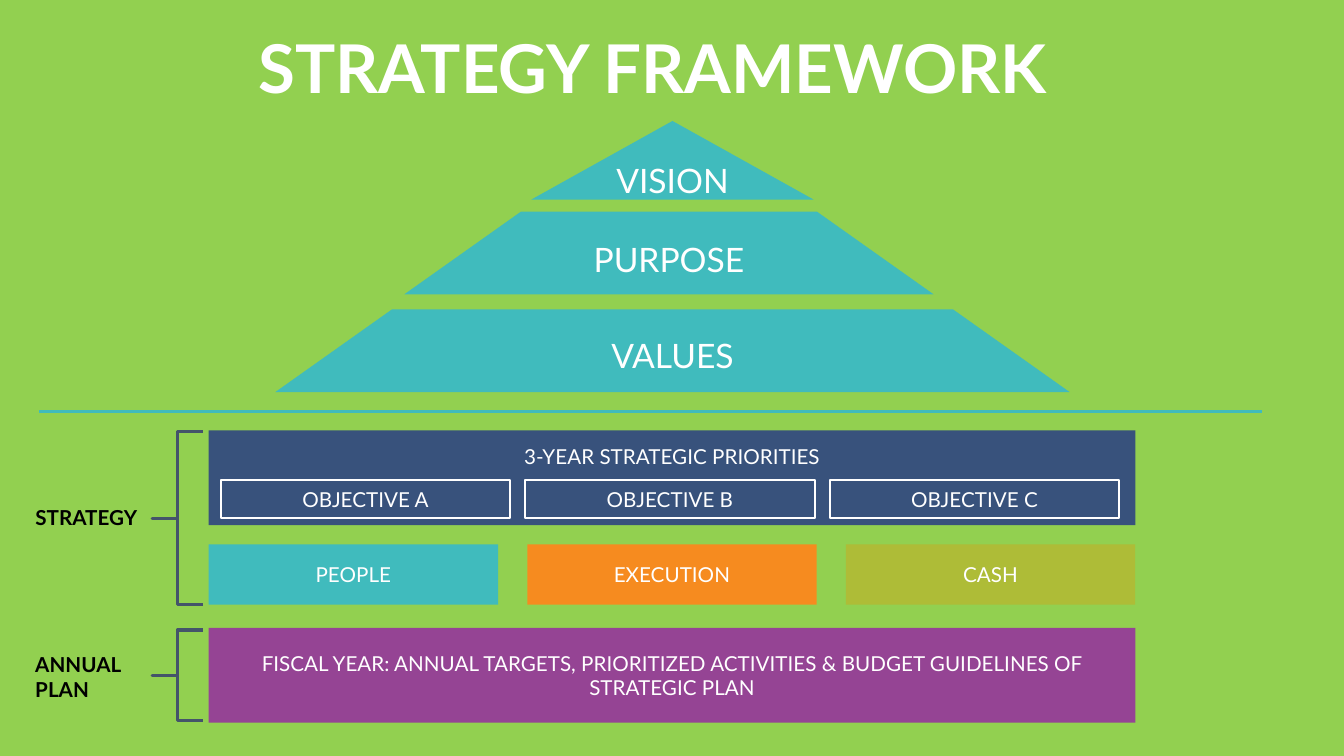
from dataclasses import dataclass

from pptx import Presentation
from pptx.dml.color import RGBColor
from pptx.enum.shapes import MSO_CONNECTOR, MSO_SHAPE
from pptx.enum.text import MSO_ANCHOR, PP_ALIGN
from pptx.oxml.ns import qn
from pptx.util import Inches, Pt
from lxml.etree import SubElement


@dataclass(frozen=True)
class Theme:
    font: str = "Lato"
    background: str = "92D050"
    teal: str = "40BBBD"
    navy: str = "38527C"
    orange: str = "F68B1F"
    olive: str = "AEBC37"
    purple: str = "954494"
    slate: str = "44546A"
    white: str = "FFFFFF"
    black: str = "000000"
    title_size: float = 48
    tier_size: float = 24
    body_size: float = 14.7
    rule_width: float = 2.25
    outline_width: float = 1.5


theme = Theme()
frame_format = {
    "word_wrap": True,
    "margin_left": Inches(0.13),
    "margin_top": Inches(0.13),
    "margin_right": Inches(0.13),
    "margin_bottom": Inches(0.13),
}


def write(shape, text, size=theme.body_size, color=theme.white, bold=False,
          align=PP_ALIGN.CENTER, anchor=MSO_ANCHOR.MIDDLE):
    frame = shape.text_frame
    for name, value in {**frame_format, "vertical_anchor": anchor}.items():
        setattr(frame, name, value)
    frame.text = text
    for paragraph in frame.paragraphs:
        paragraph.alignment = align
        for run in paragraph.runs:
            run.font.color.rgb = RGBColor.from_string(color)
            for name, value in {"name": theme.font, "size": Pt(size), "bold": bold}.items():
                setattr(run.font, name, value)


def draw(shapes, kind, box, fill=None, outline=None, width=theme.outline_width):
    shape = shapes.add_shape(kind, *map(Inches, box))
    shape.shadow.inherit = False
    if fill:
        shape.fill.solid()
        shape.fill.fore_color.rgb = RGBColor.from_string(fill)
    else:
        shape.fill.background()
    if outline:
        shape.line.color.rgb = RGBColor.from_string(outline)
        shape.line.width = Pt(width)
    else:
        shape.line.fill.background()
    return shape


presentation = Presentation()
presentation.slide_width = Inches(13.33)
presentation.slide_height = Inches(7.5)
slide = presentation.slides.add_slide(presentation.slide_layouts[6])
slide.background.fill.solid()
slide.background.fill.fore_color.rgb = RGBColor.from_string(theme.background)

title = slide.shapes.add_textbox(*map(Inches, (1.91, 0.13, 9.13, 0.62)))
write(title, "STRATEGY FRAMEWORK", theme.title_size, bold=True, anchor=MSO_ANCHOR.TOP)

divider = slide.shapes.add_connector(
    MSO_CONNECTOR.STRAIGHT, Inches(0.39), Inches(4.08), Inches(12.52), Inches(4.08))
divider.line.color.rgb = RGBColor.from_string(theme.teal)
divider.line.width = Pt(theme.rule_width)
SubElement(divider.line._get_or_add_ln().getparent(), qn("a:effectLst"))

band_left, band_width, band_height = 2.07, 9.19, 0.94
column_width = 2.87

priorities = slide.shapes.add_group_shape().shapes
priority_band = draw(priorities, MSO_SHAPE.RECTANGLE,
                     (band_left, 4.27, band_width, band_height), theme.navy)
write(priority_band, "3-YEAR STRATEGIC PRIORITIES", anchor=MSO_ANCHOR.TOP)
for column, letter in enumerate("ABC"):
    objective = draw(priorities, MSO_SHAPE.RECTANGLE,
                     (2.19 + column * 3.02, 4.76, column_width, 0.38), outline=theme.white)
    write(objective, f"OBJECTIVE {letter}")

pillars = slide.shapes.add_group_shape().shapes
pillar_step = (band_width - column_width) / 2
for column, (name, color) in enumerate([
    ("PEOPLE", theme.teal),
    ("EXECUTION", theme.orange),
    ("CASH", theme.olive),
]):
    pillar = draw(pillars, MSO_SHAPE.RECTANGLE,
                  (band_left + column * pillar_step, 5.4, column_width, 0.6), color)
    write(pillar, name)

annual_band = draw(slide.shapes, MSO_SHAPE.RECTANGLE,
                   (band_left, 6.23, band_width, band_height), theme.purple)
write(annual_band, "FISCAL YEAR: ANNUAL TARGETS, PRIORITIZED ACTIVITIES & BUDGET "
                   "GUIDELINES OF STRATEGIC PLAN")

for name, brace_top, brace_height, label_top, label_width in [
    ("STRATEGY", 4.28, 1.72, 4.89, 1.38),
    ("ANNUAL\nPLAN", 6.25, 0.9, 6.34, 2.1),
]:
    section = slide.shapes.add_group_shape().shapes
    brace = draw(section, MSO_SHAPE.LEFT_BRACE, (1.51, brace_top, 0.5, brace_height),
                 outline=theme.slate, width=theme.rule_width)
    brace.adjustments[0] = 0
    brace.adjustments[1] = 0.5
    label = section.add_textbox(*map(Inches, (0.22, label_top, label_width, 0.4)))
    write(label, name, color=theme.black, bold=True,
          align=PP_ALIGN.LEFT, anchor=MSO_ANCHOR.TOP)

pyramid = slide.shapes.add_group_shape().shapes
for name, kind, slant, box in [
    ("VISION", MSO_SHAPE.ISOSCELES_TRIANGLE, 0.5, (5.27, 1.2, 2.8, 0.78)),
    ("PURPOSE", MSO_SHAPE.TRAPEZOID, 1.41, (4.01, 2.1, 5.25, 0.82)),
    ("VALUES", MSO_SHAPE.TRAPEZOID, 1.41, (2.73, 3.07, 7.88, 0.82)),
]:
    tier = draw(pyramid, kind, box, theme.teal)
    tier.adjustments[0] = slant
    write(tier, name, theme.tier_size)

presentation.save("out.pptx")
